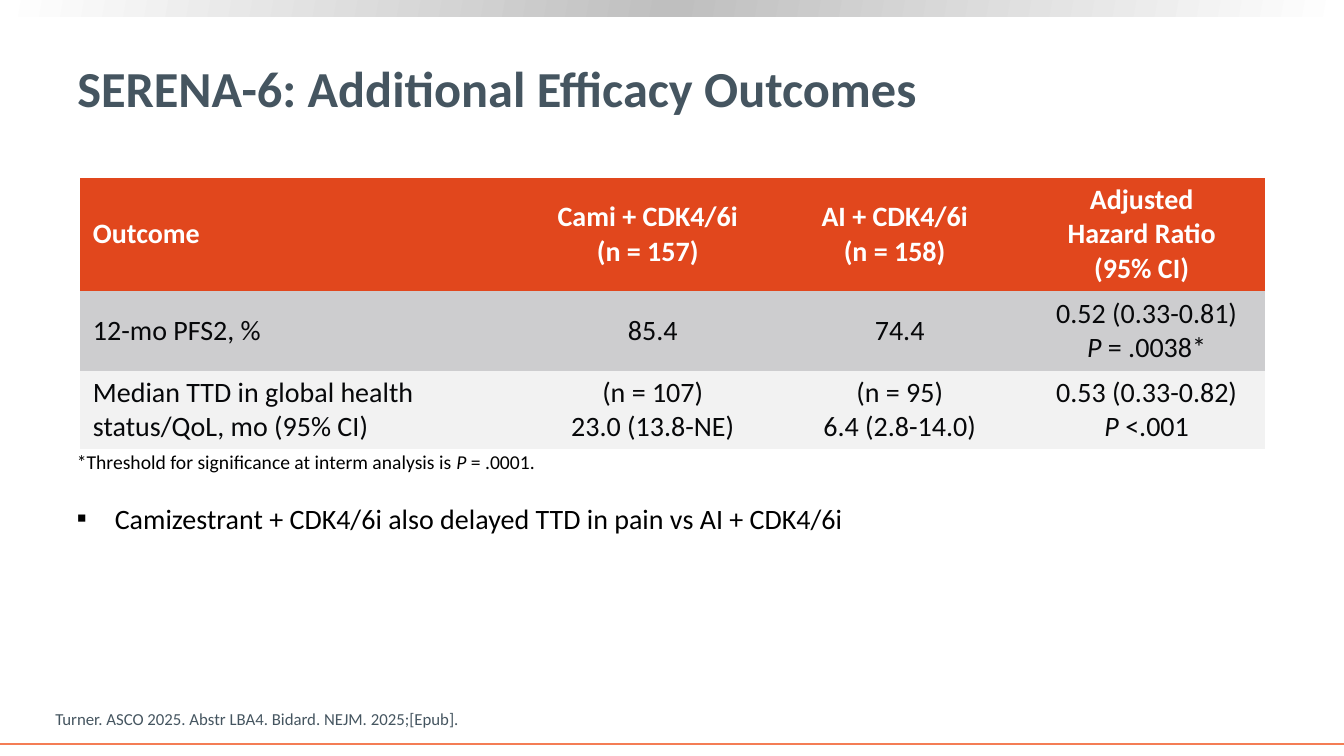
import copy
import lxml.etree
import pptx
import pptx.dml.color
import pptx.enum.shapes
import pptx.enum.text
import pptx.oxml.ns
import pptx.util

Pt = pptx.util.Pt
RGB = pptx.dml.color.RGBColor
Align = pptx.enum.text.PP_ALIGN
Anchor = pptx.enum.text.MSO_ANCHOR
qn = pptx.oxml.ns.qn

WHITE = RGB(0xFF, 0xFF, 0xFF)
BLACK = RGB(0, 0, 0)
INK = RGB(0x07, 0x08, 0x0A)
SLATE = RGB(0x45, 0x55, 0x60)
SILVER = RGB(0xBF, 0xBF, 0xBF)
ORANGE = RGB(0xE1, 0x47, 0x1D)
CORAL = RGB(0xF4, 0x7D, 0x55)
GRAY = RGB(0xCD, 0xCD, 0xCF)
PALE = RGB(0xF2, 0xF2, 0xF2)
PLAIN = "{2D5ABB26-0587-4C30-8999-92F81FD0307C}"


def write(frame, text, size=20, color=BLACK, bold=False, align=Align.LEFT,
          anchor=Anchor.TOP, wrap=True):
    frame.word_wrap = wrap
    frame.auto_size = pptx.enum.text.MSO_AUTO_SIZE.NONE
    frame.vertical_anchor = anchor
    for n, line in enumerate(text.split("\n")):
        para = frame.paragraphs[0] if n == 0 else frame.add_paragraph()
        para.alignment = align
        para.space_before = Pt(0)
        for k, part in enumerate(line.split("_")):
            if part:
                run = para.add_run()
                run.text = part
                run.font.name = "Calibri"
                run.font.size = Pt(size)
                run.font.bold = bold
                run.font.italic = k % 2 == 1
                run.font.color.rgb = color


def place(shape, left, top, width, height):
    shape.left, shape.top = Pt(left), Pt(top)
    shape.width, shape.height = Pt(width), Pt(height)


deck = pptx.Presentation()
deck.slide_width, deck.slide_height = Pt(960), Pt(540)
slide = deck.slides.add_slide(deck.slide_layouts[1])
shapes = slide.shapes

band = shapes.add_shape(pptx.enum.shapes.MSO_SHAPE.RECTANGLE, 0, 0, Pt(960), Pt(11.5))
band.shadow.inherit = False
band.line.fill.background()
band.fill.gradient()
band.fill.gradient_angle = 170
stops = band.element.spPr.find(".//" + qn("a:gsLst"))
stops.insert(1, copy.deepcopy(stops[0]))
for stop, spot, color in zip(band.fill.gradient_stops, (0, 0.5, 1), (WHITE, SILVER, WHITE)):
    stop.position = spot
    stop.color.rgb = color

rule = shapes.add_connector(pptx.enum.shapes.MSO_CONNECTOR.STRAIGHT,
                            0, Pt(531.4), Pt(960), Pt(531.4))
rule.line.color.rgb = CORAL
rule.line.width = Pt(1.5)
lxml.etree.SubElement(rule.element.spPr, qn("a:effectLst"))

title = shapes.title
place(title, 48, 19, 856, 87)
write(title.text_frame, "SERENA-6: Additional Efficacy Outcomes", size=36,
      color=SLATE, bold=True, anchor=Anchor.MIDDLE)

source = shapes.add_textbox(Pt(32.4), Pt(502.6), Pt(630), Pt(21.8))
write(source.text_frame, "Turner. ASCO 2025. Abstr LBA4. Bidard. NEJM. 2025;[Epub].",
      size=12, color=SLATE, anchor=Anchor.BOTTOM)

rows = [
    ("Outcome", "Cami + CDK4/6i\n(n = 157)", "AI + CDK4/6i\n(n = 158)",
     "Adjusted\nHazard Ratio\n(95% CI)"),
    ("12-mo PFS2, %", "85.4", "74.4", "0.52 (0.33-0.81)\n_P_ = .0038*"),
    ("Median TTD in global health status/QoL, mo (95% CI)",
     "(n = 107)\n23.0 (13.8-NE)", "(n = 95)\n6.4 (2.8-14.0)",
     "0.53 (0.33-0.82)\n_P_ <.001"),
]
table = shapes.add_table(3, 4, Pt(57), Pt(127), Pt(846.7), Pt(192)).table
table.horz_banding = False
table._tbl.tblPr.find(qn("a:tableStyleId")).text = PLAIN
for col, width in zip(table.columns, (317.5, 176.4, 176.4, 176.4)):
    col.width = Pt(width)
for r, (row, high, fill) in enumerate(zip(rows, (79.5, 57, 55.5), (ORANGE, GRAY, PALE))):
    table.rows[r].height = Pt(high)
    for c, text in enumerate(row):
        cell = table.cell(r, c)
        head = r == 0
        roomy = head or c == 0
        cell.fill.solid()
        cell.fill.fore_color.rgb = fill
        cell.margin_left = Pt(9.4 if roomy else 7.2)
        cell.margin_right = Pt(9.4 if roomy else 0)
        cell.margin_top = cell.margin_bottom = Pt(3.6 if roomy else 0.7)
        write(cell.text_frame, text, color=WHITE if head else INK, bold=head,
              align=Align.CENTER if c else Align.LEFT)
        cell.vertical_anchor = Anchor.MIDDLE

note = shapes.add_textbox(Pt(47.8), Pt(317.5), Pt(345), Pt(24.2))
write(note.text_frame, "*Threshold for significance at interm analysis is _P_ = .0001.",
      size=14, wrap=False)

body = slide.placeholders[1]
place(body, 47.8, 357, 857, 33)
write(body.text_frame, "Camizestrant + CDK4/6i also delayed TTD in pain vs AI + CDK4/6i")
para = body.text_frame.paragraphs[0]
para.line_spacing = 0.9
para.space_after = Pt(7)
props = para._p.get_or_add_pPr()
props.set("marL", str(Pt(27)))
props.set("indent", str(Pt(-27)))
tint = lxml.etree.SubElement(props, qn("a:buClr"))
lxml.etree.SubElement(tint, qn("a:srgbClr"), val=str(BLACK))
lxml.etree.SubElement(props, qn("a:buFont"), typeface="Calibri")
lxml.etree.SubElement(props, qn("a:buChar"), char="▪")

deck.save("out.pptx")
